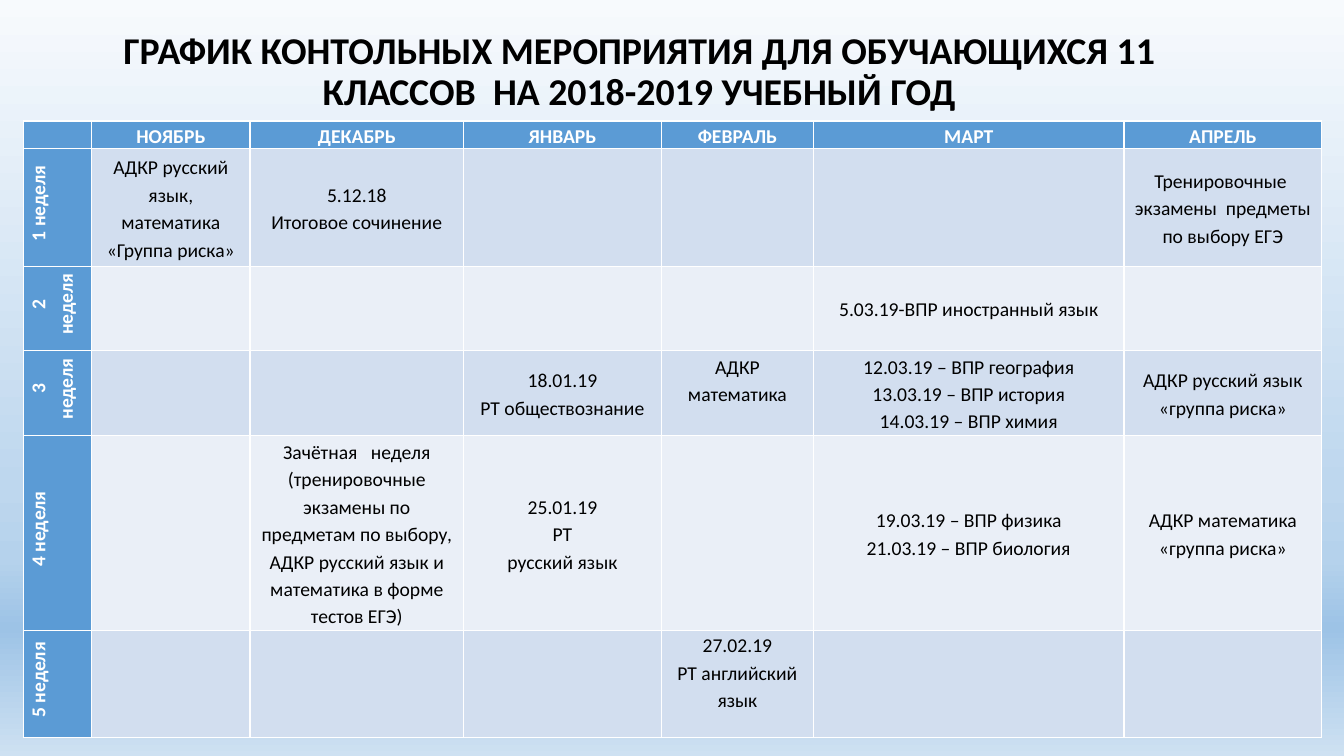
from lxml import etree
from pptx import Presentation
from pptx.dml.color import RGBColor
from pptx.enum import text
from pptx.oxml.ns import qn
from pptx.util import Inches, Pt

TITLE = "ГРАФИК КОНТОЛЬНЫХ МЕРОПРИЯТИЯ ДЛЯ ОБУЧАЮЩИХСЯ 11 КЛАССОВ  НА 2018-2019 УЧЕБНЫЙ ГОД"
MONTHS = ["НОЯБРЬ", "ДЕКАБРЬ", "ЯНВАРЬ", "ФЕВРАЛЬ", "МАРТ", "АПРЕЛЬ"]
# (week, month) -> events, one paragraph per line
EVENTS = {
    (1, "НОЯБРЬ"): "АДКР русский язык, математика\n«Группа риска»",
    (1, "ДЕКАБРЬ"): "5.12.18\nИтоговое сочинение",
    (1, "АПРЕЛЬ"): "Тренировочные  экзамены  предметы по выбору ЕГЭ",
    (2, "МАРТ"): "5.03.19-ВПР иностранный язык",
    (3, "ЯНВАРЬ"): "18.01.19\nРТ обществознание",
    (3, "ФЕВРАЛЬ"): "АДКР математика",
    (3, "МАРТ"): "12.03.19 – ВПР география\n13.03.19 – ВПР история\n14.03.19 – ВПР химия",
    (3, "АПРЕЛЬ"): "АДКР русский язык\n«группа риска»",
    (4, "ДЕКАБРЬ"): "Зачётная   неделя (тренировочные экзамены по предметам по выбору, "
                    "АДКР русский язык и математика в форме тестов ЕГЭ)",
    (4, "ЯНВАРЬ"): "25.01.19\nРТ\nрусский язык",
    (4, "МАРТ"): "19.03.19 – ВПР физика\n21.03.19 – ВПР биология",
    (4, "АПРЕЛЬ"): "АДКР математика\n«группа риска»",
    (5, "ФЕВРАЛЬ"): "27.02.19\nРТ английский язык",
}
COL_WIDTHS = [0.68, 1.57, 2.12, 1.96, 1.51, 3.08, 1.96]
ROW_HEIGHTS = [0.26, 1.17, 0.81, 0.85, 1.93, 1.06]
THEME = dict(
    font="Calibri", title_size=27, cell_size=14,
    ink="000000", head_ink="FFFFFF", head="5B9BD5", bands=("EAEFF7", "D2DEEF"),
    sky=[(0, "F7FAFD"), (64, "BED7EE"), (74, "B5D2EC"), (83, "9DC3E6"), (100, "CEE1F2")],
)


def style(p, size, color, bold, spacing):
    p.alignment = text.PP_ALIGN.CENTER
    p.line_spacing = spacing
    p.font.name = THEME["font"]
    p.font.size = Pt(size)
    p.font.bold = bold
    p.font.color.rgb = RGBColor.from_string(color)


def paint_background(s):
    fill = s.background.fill
    fill.gradient()
    fill.gradient_angle = 270
    stops = next(s.element.iter(qn("a:gsLst")))
    for stop in list(stops):
        stops.remove(stop)
    for percent, color in THEME["sky"]:
        gs = etree.SubElement(stops, qn("a:gs"), pos=str(percent * 1000))
        etree.SubElement(gs, qn("a:srgbClr"), val=color)


def add_title(s):
    sp = s.shapes.title
    sp.left, sp.top, sp.width, sp.height = map(Inches, (0.59, 0.24, 11.5, 0.96))
    tf = sp.text_frame
    tf.text = TITLE
    tf.vertical_anchor = text.MSO_ANCHOR.MIDDLE
    style(tf.paragraphs[0], THEME["title_size"], THEME["ink"], True, 0.9)


def fill_cell(cell, words, color, heading):
    cell.fill.solid()
    cell.fill.fore_color.rgb = RGBColor.from_string(color)
    cell.margin_left = cell.margin_right = Inches(0.07)
    cell.margin_top = cell.margin_bottom = 0
    cell.vertical_anchor = text.MSO_ANCHOR.TOP if heading else text.MSO_ANCHOR.MIDDLE
    cell.text_frame.text = words
    for p in cell.text_frame.paragraphs:
        style(p, THEME["cell_size"], THEME["head_ink" if heading else "ink"], heading, 1.15)


def add_schedule(s):
    frame = s.shapes.add_table(len(ROW_HEIGHTS), len(COL_WIDTHS), Inches(0.23), Inches(1.2),
                               Inches(sum(COL_WIDTHS)), Inches(sum(ROW_HEIGHTS)))
    table = frame.table
    table.first_col = True
    for column, width in zip(table.columns, COL_WIDTHS):
        column.width = Inches(width)
    for row, height in zip(table.rows, ROW_HEIGHTS):
        row.height = Inches(height)

    for col, month in enumerate([""] + MONTHS):
        fill_cell(table.cell(0, col), month, THEME["head"], True)
    for week in range(1, len(ROW_HEIGHTS)):
        label = table.cell(week, 0)
        fill_cell(label, f"{week} неделя", THEME["head"], True)
        label._tc.get_or_add_tcPr().set("vert", "vert270")
        label.text_frame.paragraphs[0]._p.get_or_add_pPr().set("marL", str(Inches(0.08)))
        for col, month in enumerate(MONTHS, 1):
            fill_cell(table.cell(week, col), EVENTS.get((week, month), ""),
                      THEME["bands"][week % 2], False)

    february = MONTHS.index("ФЕВРАЛЬ") + 1
    table.cell(3, february).margin_bottom = Inches(0.27)
    table.cell(5, february).vertical_anchor = text.MSO_ANCHOR.TOP


def main():
    prs = Presentation()
    prs.slide_width, prs.slide_height = Inches(13.33), Inches(7.5)
    s = prs.slides.add_slide(prs.slide_layouts[5])
    paint_background(s)
    add_title(s)
    add_schedule(s)
    prs.save("out.pptx")


if __name__ == "__main__":
    main()
